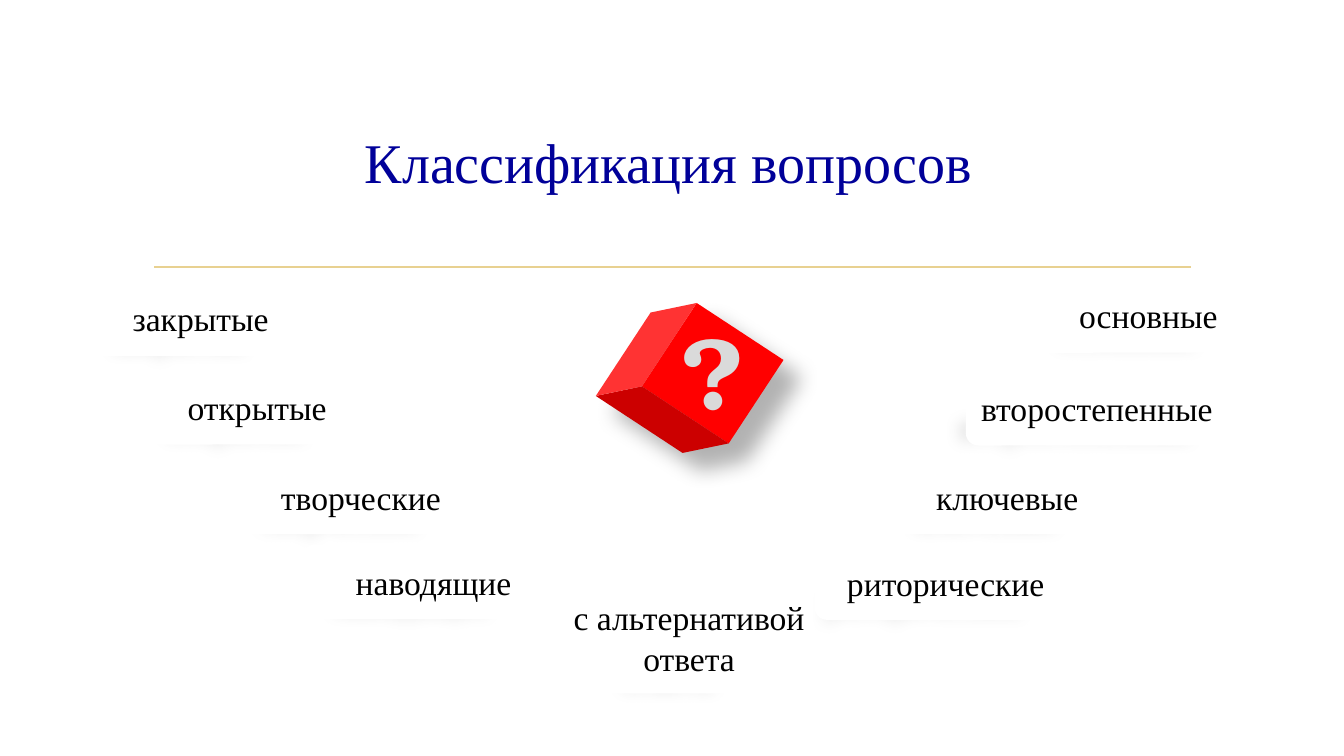
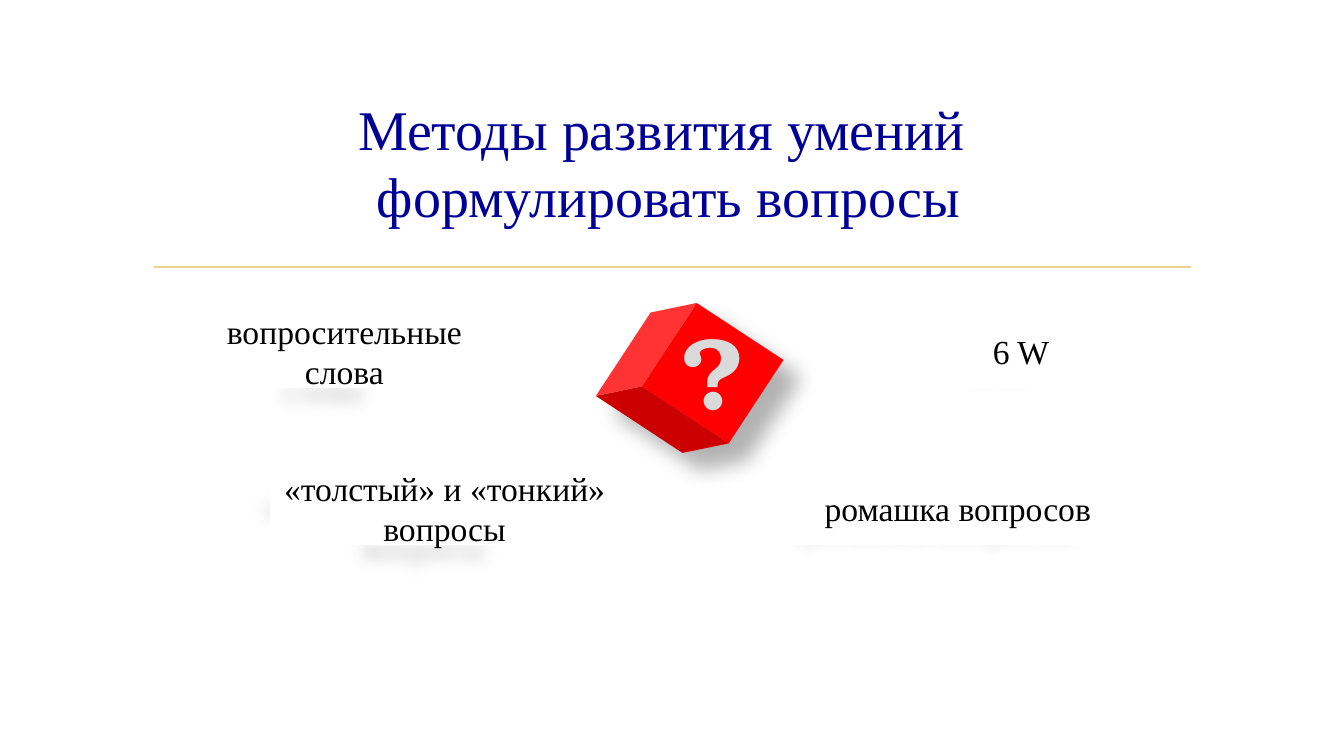
import pptx
import pptx.util
import pptx.dml.color
import pptx.enum.shapes
import pptx.enum.text
import pptx.oxml
import pptx.oxml.ns

Inches, Pt = pptx.util.Inches, pptx.util.Pt
RGB = pptx.dml.color.RGBColor.from_string
SHAPE = pptx.enum.shapes.MSO_SHAPE
MIDDLE = pptx.enum.text.MSO_ANCHOR.MIDDLE
AUTO = pptx.enum.text.MSO_AUTO_SIZE

COLORS = {"page": "FFFFFF", "title": "000099", "rule": "E8D191", "cube": "FF0000",
          "mark": "DADADA", "text": "000000", "shadow": "000000"}
FONT = "Times New Roman"
ROW, WIDE_ROW = 2.6, 3.39  # label widths
PAIR = 3.46
LABEL_H = 0.74

# Title, then labels as (text, left, top, width, height)
SLIDES = [
    ("Классификация вопросов", [
        ("закрытые", 0.69, 2.79, ROW, LABEL_H),
        ("открытые", 1.25, 3.67, ROW, LABEL_H),
        ("творческие", 2.28, 4.56, ROW, LABEL_H),
        ("с альтернативой\nответа", 5.35, 5.77, 2.97, 1.11),
        ("наводящие", 3, 5.4, ROW, LABEL_H),
        ("основные", 10.09, 2.76, ROW, LABEL_H),
        ("второстепенные", 9.58, 3.68, ROW, LABEL_H),
        ("ключевые", 8.69, 4.56, ROW, LABEL_H),
        ("риторические", 8.08, 5.41, ROW, LABEL_H),
    ]),
    ("Методы развития умений \nформулировать вопросы", [
        ("вопросительные слова", 1.72, 3.11, WIDE_ROW, LABEL_H),
        ("«толстый» и «тонкий» вопросы", 2.68, 4.67, PAIR, LABEL_H),
        ("6 W ", 8.47, 3.11, WIDE_ROW, LABEL_H),
        ("ромашка вопросов", 7.77, 4.67, PAIR, LABEL_H),
    ]),
]


def set_text(tf, text, size, color, font=FONT, bold=False):
    tf.text = text
    for p in tf.paragraphs:
        p.alignment = pptx.enum.text.PP_ALIGN.CENTER
        for r in p.runs:
            r.font.size, r.font.name, r.font.bold = Pt(size), font, bold
            r.font.color.rgb = RGB(color)


def add_shadow(sp, opacity, blur, distance, angle):
    sp._element.spPr.append(pptx.oxml.parse_xml(
        f'<a:effectLst {pptx.oxml.ns.nsdecls("a")}>'
        f'<a:outerShdw blurRad="{Pt(blur)}" dist="{Pt(distance)}" '
        f'dir="{angle * 60000}" algn="ctr" rotWithShape="0">'
        f'<a:srgbClr val="{COLORS["shadow"]}"><a:alpha val="{opacity * 1000}"/></a:srgbClr>'
        '</a:outerShdw></a:effectLst>'))


prs = pptx.Presentation()
prs.slide_width, prs.slide_height = Inches(13.33), Inches(7.5)

# Shared layout: background, title place, rule
layout = prs.slide_layouts[5]
bg = prs.slide_master.background.fill
bg.solid()
bg.fore_color.rgb = RGB(COLORS["page"])
title = layout.placeholders[0]
title.left, title.top = Inches(0.5), Inches(0.56)
title.width, title.height = Inches(12.26), Inches(2.08)

slides = [prs.slides.add_slide(layout) for _ in SLIDES]
rule = slides[0].shapes.add_connector(
    pptx.enum.shapes.MSO_CONNECTOR.STRAIGHT,
    Inches(1.53), Inches(2.65), Inches(11.81), Inches(2.65))
rule.line.color.rgb = RGB(COLORS["rule"])
rule.line.width = Pt(1.25)
rule._element.spPr.append(pptx.oxml.parse_xml(
    f'<a:effectLst {pptx.oxml.ns.nsdecls("a")}/>'))
layout.shapes._spTree.append(rule._element)

for s, (heading, labels) in zip(slides, SLIDES):
    # Title
    tf = s.shapes.title.text_frame
    set_text(tf, heading, 40, COLORS["title"])
    tf.vertical_anchor = MIDDLE
    tf.auto_size = AUTO.NONE

    # Cube with question mark
    cube = s.shapes.add_shape(SHAPE.CUBE, Inches(6.18), Inches(3.07), Inches(1.32), Inches(1.36))
    cube.rotation = 303.3
    cube._element.spPr.xfrm.set("flipH", "1")
    cube.fill.solid()
    cube.fill.fore_color.rgb = RGB(COLORS["cube"])
    cube.line.fill.background()
    add_shadow(cube, 30, 15, 18, 45)

    mark = s.shapes.add_textbox(Inches(6.47), Inches(3.01), Inches(1.17), Inches(1.31))
    tf = mark.text_frame
    tf.word_wrap = True
    tf.auto_size = AUTO.SHAPE_TO_FIT_TEXT
    set_text(tf, "?", 72, COLORS["mark"], "TeX Gyre Bonum", True)
    tf.paragraphs[0].runs[0].font._element.set("spc", "50")

    # Labels, filled with the slide background so that only the text casts a shadow
    for text, left, top, width, height in labels:
        sp = s.shapes.add_shape(SHAPE.ROUNDED_RECTANGLE, Inches(left), Inches(top),
                                Inches(width), Inches(height))
        sp._element.set("useBgFill", "1")
        sp.line.fill.background()
        add_shadow(sp, 28, 11.8, 19.7, 141)
        tf = sp.text_frame
        tf.word_wrap = True
        tf.vertical_anchor = MIDDLE
        set_text(tf, text, 24, COLORS["text"])

prs.save("out.pptx")
